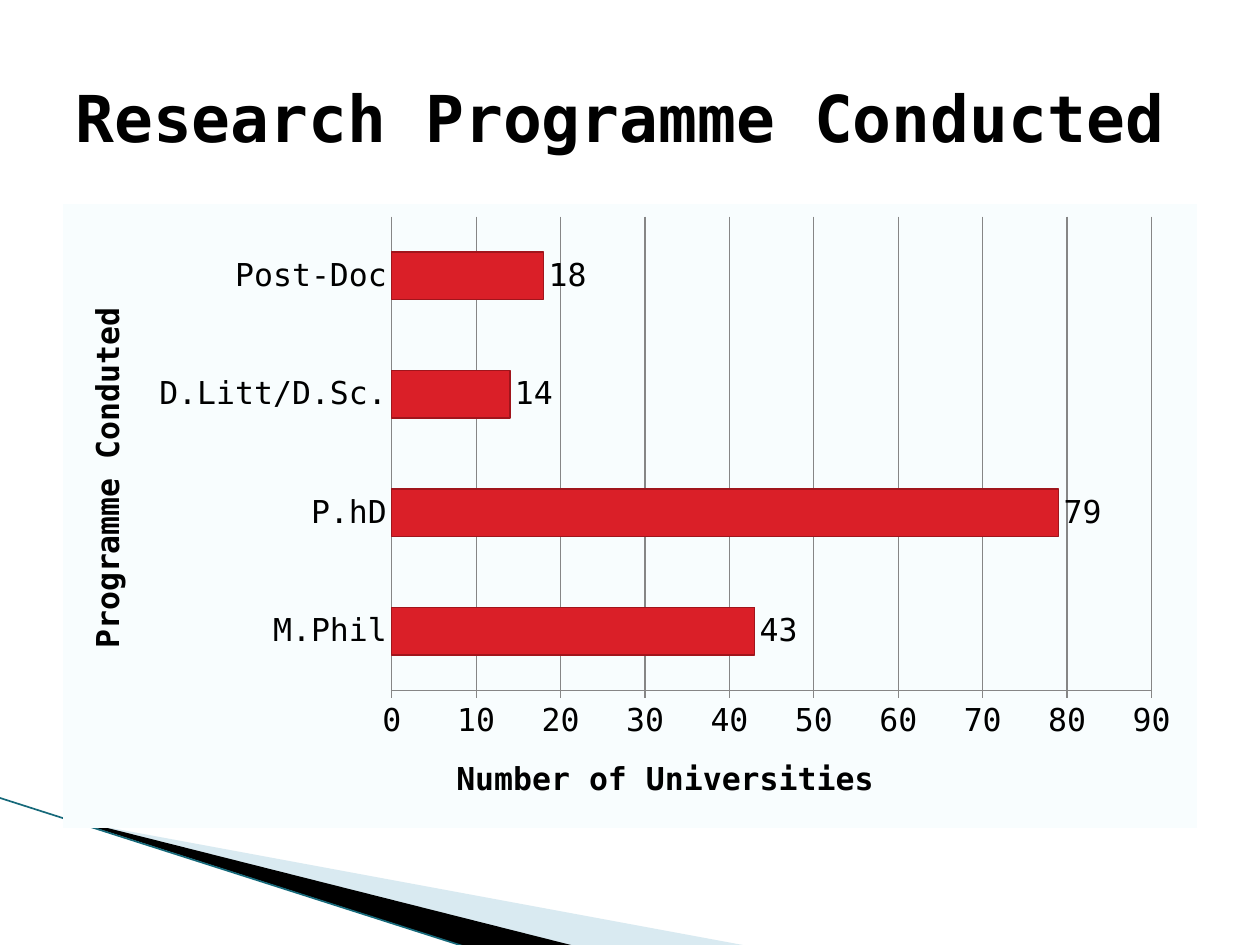
from lxml import etree
from pptx import Presentation
from pptx.chart.data import CategoryChartData
from pptx.dml.color import RGBColor
from pptx.enum.chart import XL_CHART_TYPE, XL_LABEL_POSITION, XL_TICK_MARK
from pptx.enum.shapes import MSO_CONNECTOR
from pptx.enum.text import MSO_ANCHOR
from pptx.oxml import parse_xml
from pptx.oxml.ns import nsdecls, qn
from pptx.util import Inches, Pt

BAR = XL_CHART_TYPE.BAR_CLUSTERED
OUTSIDE_END = XL_LABEL_POSITION.OUTSIDE_END
TICK_NONE, TICK_OUT = XL_TICK_MARK.NONE, XL_TICK_MARK.OUTSIDE
STRAIGHT = MSO_CONNECTOR.STRAIGHT
MIDDLE = MSO_ANCHOR.MIDDLE

FONT = "DejaVu Sans Mono"
COLORS = {
    "text": "000000",
    "panel": "F8FDFE",
    "bar": "DA1F28",
    "bar_edge": "A0151C",
    "grid": "868686",
    "ribbon": "000000",
    "ribbon_light": "A0CBDC",
    "ribbon_edge": "16697A",
}
UNIT = Inches(0.5)
PAGE_COLUMNS, PAGE_ROWS = 20, 15
TITLE_BOX = (1, 0.6, 18, 2.5)
CHART_BOX = (1, 3.24, 18, 9.9)
RIBBON_BOX = (0, 12.66, 11.9, 2.38)
PLOT_SHARES = {"x": 0.29, "y": 0.02, "w": 0.67, "h": 0.76}

PROGRAMMES = {"M.Phil": 43, "P.hD": 79, "D.Litt/D.Sc.": 14, "Post-Doc": 18}


def grid(*lengths):
    return [round(length * UNIT) for length in lengths]


def color(name):
    return RGBColor.from_string(COLORS[name])


def style_font(font, size, bold=False):
    font.name, font.size, font.bold = FONT, Pt(size), bold
    font.color.rgb = color("text")


def style_line(line, name, width=0.75):
    line.color.rgb = color(name)
    line.width = Pt(width)


def add_text(frame, text, size, bold=False):
    span = frame.paragraphs[0].add_run()
    span.text = text
    style_font(span.font, size, bold)


def add_outline(page, box, points, fill, opacity=100):
    left, top = box[:2]
    corners = [grid(left + x, top + y) for x, y in points]
    builder = page.shapes.build_freeform(*corners[0])
    builder.add_line_segments(corners[1:], close=True)
    shape = builder.convert_to_shape()
    shape.shadow.inherit = False
    shape.line.fill.background()
    shape.fill.solid()
    shape.fill.fore_color.rgb = color(fill)
    if opacity < 100:
        tint = shape.fill._xPr.find(".//" + qn("a:srgbClr"))
        etree.SubElement(tint, qn("a:alpha")).set("val", str(opacity * 1000))


def add_ribbon(page, box):
    left, top = box[:2]
    light = [(1.1, 0.36), (11.9, 2.36), (9.12, 2.36), (1.1, 0.34)]
    dark = [(1.06, 0.32), (9.14, 2.36), (7.44, 2.38), (1.08, 0.34)]
    add_outline(page, box, light, "ribbon_light", opacity=40)
    add_outline(page, box, dark, "ribbon")
    edge = page.shapes.add_connector(
        STRAIGHT, *grid(left - 0.02, top, left + 7.42, top + 2.38)
    )
    style_line(edge.line, "ribbon_edge", 0.95)
    etree.SubElement(edge._element.spPr, qn("a:effectLst"))


def add_title(page, box):
    frame = page.shapes.add_textbox(*grid(*box)).text_frame
    frame.word_wrap = True
    frame.vertical_anchor = MIDDLE
    add_text(frame, "Research Programme Conducted", 36.9, bold=True)


def style_axis(axis, title, tick):
    axis.has_title = True
    add_text(axis.axis_title.text_frame, title, 18, bold=True)
    axis.major_tick_mark, axis.minor_tick_mark = tick, TICK_NONE
    style_line(axis.format.line, "grid")


def set_chart_area(chart):
    root = chart.element.find(qn("c:chart"))
    root.addnext(parse_xml(
        f'<c:spPr {nsdecls("c", "a")}><a:solidFill>'
        f'<a:srgbClr val="{COLORS["panel"]}"/></a:solidFill>'
        "<a:ln><a:noFill/></a:ln></c:spPr>"
    ))
    plot_area = root.find(qn("c:plotArea"))
    for layout in plot_area.findall(qn("c:layout")):
        plot_area.remove(layout)
    shares = "".join(f'<c:{key} val="{share}"/>' for key, share in PLOT_SHARES.items())
    plot_area.insert(0, parse_xml(
        f'<c:layout {nsdecls("c")}><c:manualLayout><c:layoutTarget val="inner"/>'
        f'<c:xMode val="edge"/><c:yMode val="edge"/>{shares}'
        "</c:manualLayout></c:layout>"
    ))


def add_programme_chart(page, box):
    data = CategoryChartData(number_format="#,##0")
    data.categories = list(PROGRAMMES)
    data.add_series("Series 1", list(PROGRAMMES.values()))
    chart = page.shapes.add_chart(BAR, *grid(*box), data).chart
    chart.has_title = chart.has_legend = False
    style_font(chart.font, 18)
    set_chart_area(chart)

    style_axis(chart.category_axis, "Programme Conduted", TICK_NONE)
    values = chart.value_axis
    style_axis(values, "Number of Universities", TICK_OUT)
    values.minimum_scale, values.maximum_scale, values.major_unit = 0, 90, 10
    values.has_major_gridlines = True
    style_line(values.major_gridlines.format.line, "grid")

    plot = chart.plots[0]
    plot.gap_width = 150
    plot.vary_by_categories = False
    plot.has_data_labels = True
    labels = plot.data_labels
    labels.show_value = True
    labels.position = OUTSIDE_END
    labels.number_format, labels.number_format_is_linked = "#,##0", False
    style_font(labels.font, 18)
    bars = plot.series[0].format
    bars.fill.solid()
    bars.fill.fore_color.rgb = color("bar")
    style_line(bars.line, "bar_edge")


def main():
    deck = Presentation()
    deck.slide_width, deck.slide_height = grid(PAGE_COLUMNS, PAGE_ROWS)
    page = deck.slides.add_slide(deck.slide_layouts[6])
    add_ribbon(page, RIBBON_BOX)
    add_programme_chart(page, CHART_BOX)
    add_title(page, TITLE_BOX)
    deck.save("out.pptx")


if __name__ == "__main__":
    main()
